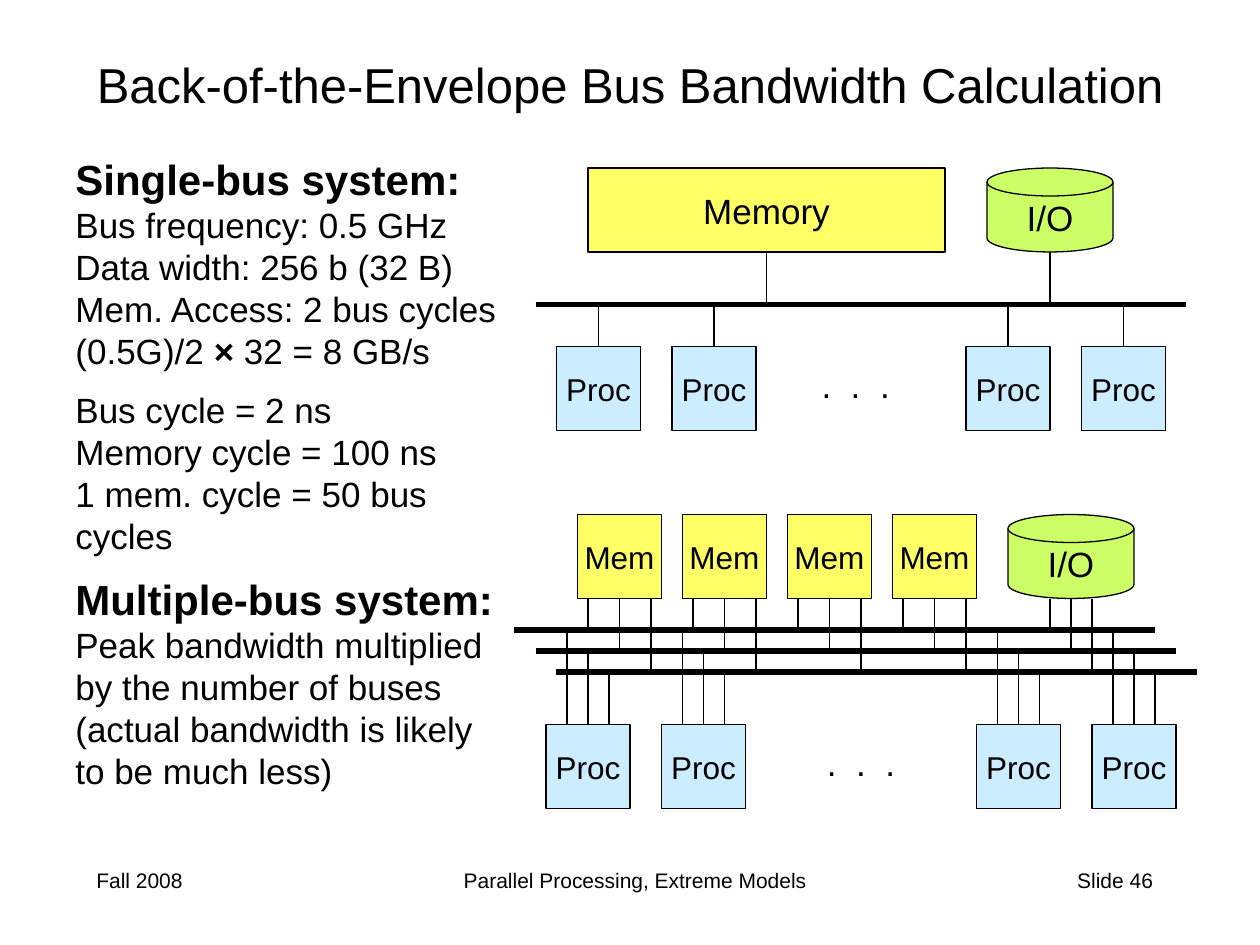
"""Build the slide on bus bandwidth for single-bus and multiple-bus systems."""
from lxml import etree
from pptx import Presentation
from pptx.dml.color import RGBColor
from pptx.enum.shapes import MSO_CONNECTOR, MSO_SHAPE
from pptx.enum.text import MSO_ANCHOR, PP_ALIGN
from pptx.oxml.ns import qn
from pptx.util import Inches, Pt

RECT, DISK = MSO_SHAPE.RECTANGLE, MSO_SHAPE.FLOWCHART_MAGNETIC_DISK
STRAIGHT = MSO_CONNECTOR.STRAIGHT
LEFT, CENTER, RIGHT = PP_ALIGN.LEFT, PP_ALIGN.CENTER, PP_ALIGN.RIGHT
TOP, MIDDLE = MSO_ANCHOR.TOP, MSO_ANCHOR.MIDDLE
BLACK, YELLOW, BLUE, GREEN = "000000", "FFFF66", "CCECFF", "CCFF66"
CELL = Inches(1) / 12
UNIT_ROWS = 8


def rgb(value):
    return RGBColor.from_string(value)


def write(frame, lines, align=LEFT, anchor=TOP, wrap=True, spacing=0):
    frame.word_wrap, frame.vertical_anchor = wrap, anchor
    for index, (size, gap, pieces) in enumerate(lines):
        paragraph = frame.add_paragraph() if index else frame.paragraphs[0]
        paragraph.alignment, paragraph.space_before = align, Pt(gap)
        for text, bold in pieces:
            run = paragraph.add_run()
            run.text = text
            for key, value in {"name": "Arial", "size": Pt(size), "bold": bold}.items():
                setattr(run.font, key, value)
            run.font.color.rgb = rgb(BLACK)
            if spacing:
                run.font._element.set("spc", str(spacing))


deck = Presentation()
deck.slide_width, deck.slide_height = Inches(10), Inches(7.5)
slide = deck.slides.add_slide(deck.slide_layouts[6])

single_bus = [
    (24, 0, [("Single-bus system:", True)]),
    (20, 0, [("Bus frequency: 0.5 GHz", False)]),
    (20, 0, [("Data width: 256 b (32 B)", False)]),
    (20, 0, [("Mem. Access: 2 bus cycles", False)]),
    (20, 0, [("(0.5G)/2 ", False), ("×", True), (" 32 = 8 GB/s", False)]),
    (20, 9.5, [("Bus cycle = 2 ns", False)]),
    (20, 0, [("Memory cycle = 100 ns", False)]),
    (20, 0, [("1 mem. cycle = 50 bus cycles", False)]),
]
multiple_bus = [
    (24, 0, [("Multiple-bus system:", True)]),
    (20, 0, [("Peak bandwidth multiplied by the number of buses", False)]),
    (20, 0, [("(actual bandwidth is likely to be much less)", False)]),
]
dots = [(20, 0, [(". . .", False)])]
title = [(28, 0, [("Back-of-the-Envelope Bus Bandwidth Calculation", False)])]
term = [(12, 0, [("Fall 2008", False)])]
course = [(12, 0, [("Parallel Processing, Extreme Models", False)])]
number = [(12, 0, [("Slide 46", False)])]
dots_format = {"align": CENTER, "spacing": 280}

for grid, lines, layout in [
    ((8, 82, 25, 6), term, {}),
    ((29, 82, 63, 6), course, {"align": CENTER}),
    ((86, 82, 25, 6), number, {"align": RIGHT}),
    ((6, 3, 108, 10), title, {"align": CENTER, "anchor": MIDDLE}),
    ((6, 14, 45, 36), single_bus, {}),
    ((6, 54, 43, 22), multiple_bus, {}),
    ((76, 34, 11, 5), dots, dots_format),
    ((75, 70, 14, 5), dots, dots_format),
]:
    area = slide.shapes.add_textbox(*(int(CELL * n) for n in grid))
    write(area.text_frame, lines, **layout)

one_bus, three_buses = [29], [60, 62, 64]
wires = [(51, 29, 113, 29, 3)]
wires += [(49 + 2 * i, row, 110 + 2 * i, row, 3) for i, row in enumerate(three_buses)]

for label, size, kind, fill, width, top, columns, taps, buses in [
    ("Memory", 20, RECT, YELLOW, 34, 16, [56], [17], one_bus),
    ("I/O", 20, DISK, GREEN, 12, 16, [94], [6], one_bus),
    ("Proc", 18, RECT, BLUE, 8, 33, [53, 64, 92, 103], [4], one_bus),
    ("Mem", 18, RECT, YELLOW, 8, 49, [55, 65, 75, 85], [1, 4, 7], three_buses),
    ("I/O", 20, DISK, GREEN, 12, 49, [96], [4, 6, 8], three_buses),
    ("Proc", 18, RECT, BLUE, 8, 69, [52, 63, 93, 104], [2, 4, 6], three_buses),
]:
    for column in columns:
        unit = slide.shapes.add_shape(kind, *(int(CELL * n) for n in (column, top, width, UNIT_ROWS)))
        unit.shadow.inherit = False
        unit.fill.solid()
        unit.fill.fore_color.rgb = rgb(fill)
        unit.line.color.rgb = rgb(BLACK)
        unit.line.width = Pt(0.75)
        write(unit.text_frame, [(size, 0, [(label, False)])], CENTER, MIDDLE, False)
        for tap, bus in zip(taps, buses):
            edge = top if bus < top else top + UNIT_ROWS
            wires.append((column + tap, edge, column + tap, bus, 0.75))

for *ends, weight in wires:
    wire = slide.shapes.add_connector(STRAIGHT, *(int(CELL * n) for n in ends))
    wire.line.color.rgb = rgb(BLACK)
    wire.line.width = Pt(weight)
    etree.SubElement(wire._element.spPr, qn("a:effectLst"))

deck.save("out.pptx")
